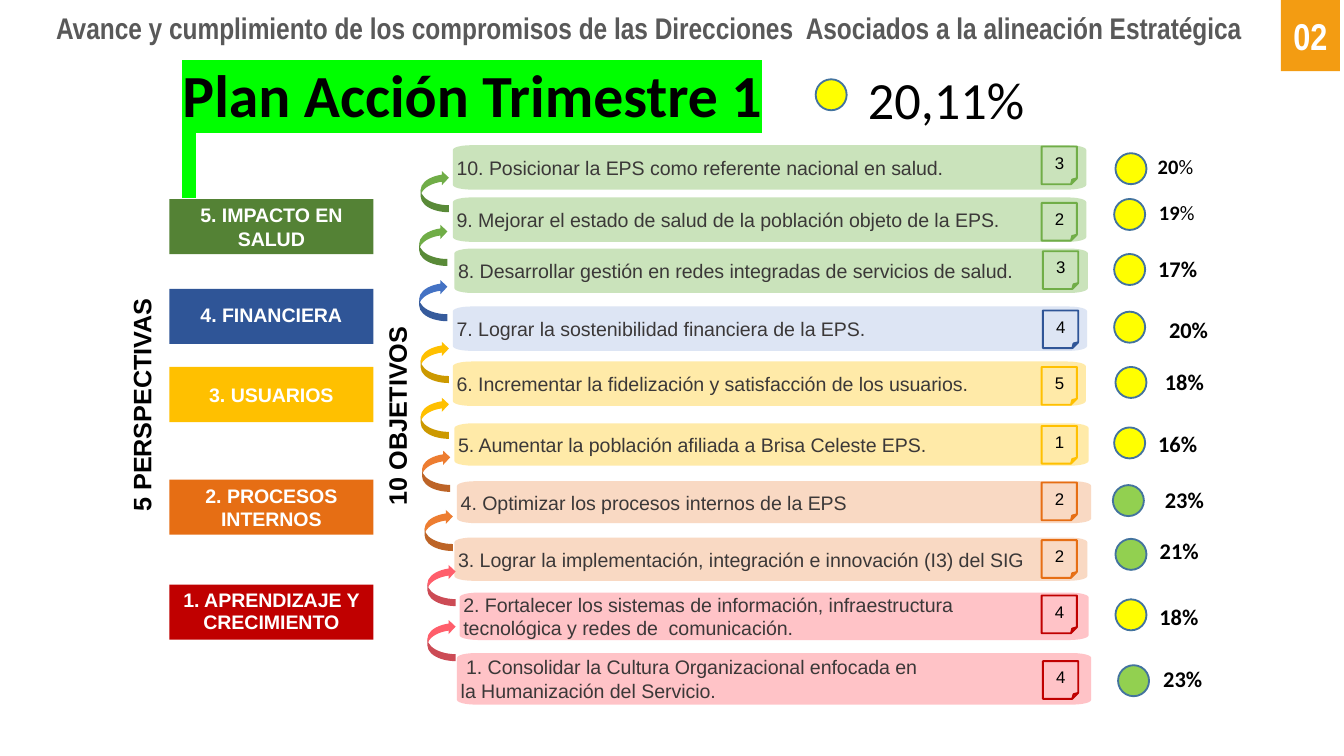
from math import cos, pi, sin

from lxml.etree import SubElement
from pptx import Presentation
from pptx.dml.color import RGBColor
from pptx.enum.shapes import MSO_SHAPE
from pptx.enum.text import MSO_ANCHOR, PP_ALIGN
from pptx.oxml.ns import qn
from pptx.util import Pt

# Colours
BLACK = RGBColor(0, 0, 0)
WHITE = RGBColor(255, 255, 255)
GREY = RGBColor(0x59, 0x59, 0x59)
INK = RGBColor(0x3B, 0x38, 0x38)
AMBER = RGBColor(0xF3, 0x9C, 0x12)
YELLOW = RGBColor(0xFF, 0xFF, 0x00)
LIME = RGBColor(0x92, 0xD0, 0x50)
DOT_EDGE = RGBColor(0x43, 0x73, 0x9E)
DARK_GREEN = RGBColor(0x54, 0x82, 0x35)
GREEN = RGBColor(0x70, 0xAD, 0x47)
PALE_GREEN = RGBColor(0xC5, 0xE0, 0xB4)
NAVY = RGBColor(0x2F, 0x55, 0x97)
BLUE = RGBColor(0x44, 0x72, 0xC4)
PALE_BLUE = RGBColor(0xDA, 0xE3, 0xF3)
GOLD = RGBColor(0xFF, 0xC0, 0x00)
PALE_GOLD = RGBColor(0xFF, 0xE8, 0x9F)
RUST = RGBColor(0xE6, 0x6E, 0x14)
ORANGE = RGBColor(0xED, 0x7D, 0x31)
PALE_ORANGE = RGBColor(0xF9, 0xD5, 0xBD)
RED = RGBColor(0xC0, 0x00, 0x00)
PINK = RGBColor(0xFF, 0x5E, 0x6B)
PALE_PINK = RGBColor(0xFF, 0xBD, 0xC2)

# Content
HEADING = "Avance y cumplimiento de los compromisos de las Direcciones  Asociados a la alineación Estratégica"
PAGE = "02"
PLAN = "Plan Acción Trimestre 1"
PLAN_RESULT = "20,11%"

# Perspective: text, top, fill, line spacing
PERSPECTIVES = [
    ("5. IMPACTO EN SALUD", 106.6, DARK_GREEN, 1),
    ("4. FINANCIERA", 154.8, NAVY, 0.9),
    ("3. USUARIOS", 196.6, GOLD, 1),
    ("2. PROCESOS INTERNOS", 257, RUST, 1),
    ("1. APRENDIZAJE Y CRECIMIENTO", 313.2, RED, 0.9),
]

# Side label: text, left, top, width
SIDE_LABELS = [("5 PERSPECTIVAS", 2.9, 206.6, 148.3), ("10 OBJETIVOS", 157.7, 212.4, 112.3)]

# Group: band, note outline, arrow
GROUPS = {
    "impacto": (PALE_GREEN, GREEN, GREEN),
    "financiera": (PALE_BLUE, NAVY, BLUE),
    "usuarios": (PALE_GOLD, GOLD, GOLD),
    "procesos": (PALE_ORANGE, RUST, ORANGE),
    "aprendizaje": (PALE_PINK, RED, PINK),
}

# Objective: lines, group, band box, count, note place, arrow place,
# status, dot place, result, result place
OBJECTIVES = [
    (["10. Posicionar la EPS como referente nacional en salud."], "impacto",
     (242.6, 77.8, 339.4, 23.8), 3, (558, 78.5), None, YELLOW, (597.6, 82.1), 20, (613.1, 79.2)),
    (["9. Mejorar el estado de salud de la población objeto de la EPS."], "impacto",
     (242.6, 105.8, 339.4, 23.8), 2, (558, 108.7), (225.4, 91.4), YELLOW, (596.9, 106.6), 19, (613.8, 103.7)),
    (["8. Desarrollar gestión en redes integradas de servicios de salud."], "impacto",
     (243.4, 133.2, 339.4, 23.8), 3, (558.7, 134.6), (224.6, 120.2), YELLOW, (596.9, 136.1), 17, (613.4, 133.2)),
    (["7. Lograr la sostenibilidad financiera de la EPS."], "financiera",
     (242.6, 164.2, 339.8, 23.8), 4, (558.7, 166.3), (224.6, 149.8), YELLOW, (596.9, 167), 20, (619.2, 165.6)),
    (["6. Incrementar la fidelización y satisfacción de los usuarios."], "usuarios",
     (242.6, 193.7, 339.1, 23.8), 5, (558, 196.6), (225.4, 182.9), YELLOW, (597.6, 196.6), 18, (617, 193.7)),
    (["5. Aumentar la población afiliada a Brisa Celeste EPS."], "usuarios",
     (243.4, 226.8, 339.8, 22.7), 1, (558, 228.2), (225.4, 212.8), YELLOW, (596.9, 229), 16, (613.4, 226.8)),
    (["4. Optimizar los procesos internos de la EPS"], "procesos",
     (244.8, 257.8, 339.8, 22.5), 2, (558, 258.5), (226.1, 241.2), LIME, (596.2, 259.9), 23, (617, 257)),
    (["3. Lograr la implementación, integración e innovación (I3) del SIG"], "procesos",
     (243.4, 288, 339.1, 23.2), 2, (558, 289.4), (227.5, 272.9), LIME, (597.6, 288.7), 21, (614.2, 284.4)),
    (["2. Fortalecer los sistemas de información, infraestructura",
      "tecnológica y redes de  comunicación."], "aprendizaje",
     (246.2, 317.5, 337, 25.4), 4, (558, 319), (229, 302.4), YELLOW, (597.6, 321.1), 18, (614, 319.7)),
    ([" 1. Consolidar la Cultura Organizacional enfocada en",
      "la Humanización del Servicio."], "aprendizaje",
     (244.8, 349.9, 339.8, 27.6), 4, (558.7, 354.2), (229, 331.9), LIME, (599, 356.4), 23, (616.1, 352.8)),
]
REGULAR_SIGN = (20, 19)  # first two results carry a lighter, smaller percent sign

# Text formats
HEADING_FONT = dict(name="Arial Narrow", size=Pt(16), bold=True)
PAGE_FONT = dict(name="Arial Narrow", size=Pt(20), bold=True)
LABEL_FONT = dict(name="Arial", size=Pt(10.5), bold=True)
SIDE_FONT = dict(name="Arial", size=Pt(13.5), bold=True)
BAND_FONT = dict(name="Arial", size=Pt(10.5), bold=False)
NOTE_FONT = dict(name="Arial", size=Pt(9), bold=False)
PLAN_FONT = dict(name="Calibri", size=Pt(32), bold=True)
PLAN_RESULT_FONT = dict(name="Calibri", size=Pt(28), bold=False)
RESULT_FONT = dict(name="Calibri", size=Pt(12), bold=True)
SMALL_RESULT_FONT = dict(name="Calibri", size=Pt(11), bold=True)


def add_run(paragraph, text, font, color):
    run = paragraph.add_run()
    run.text = text
    for key, value in font.items():
        setattr(run.font, key, value)
    run.font.color.rgb = color
    return run


def write(shape, lines, font, color, align=PP_ALIGN.CENTER, anchor=MSO_ANCHOR.MIDDLE,
          inset=(7.2, 3.6), spacing=1):
    frame = shape.text_frame
    frame.word_wrap = True
    frame.vertical_anchor = anchor
    frame.margin_left = frame.margin_right = Pt(inset[0])
    frame.margin_top = frame.margin_bottom = Pt(inset[1])
    for index, line in enumerate(lines):
        paragraph = frame.add_paragraph() if index else frame.paragraphs[0]
        paragraph.alignment = align
        paragraph.line_spacing = spacing
        if line:
            add_run(paragraph, line, font, color)
    return frame.paragraphs[0]


def paint(shape, fill=None, line=None):
    shape.shadow.inherit = False
    if fill is None:
        shape.fill.background()
    else:
        shape.fill.solid()
        shape.fill.fore_color.rgb = fill
    if line is None:
        shape.line.fill.background()
    else:
        shape.line.color.rgb = line
        shape.line.width = Pt(1)
    return shape


def add_preset(preset, box, fill=None, line=None):
    return paint(slide.shapes.add_shape(preset, *map(Pt, box)), fill, line)


def add_text(box, text, font, **options):
    label = slide.shapes.add_textbox(*map(Pt, box))
    return label, write(label, [text], font, BLACK, **options)


def add_band(left, top, width, height, fill):
    """Band with flat elliptical corners, slightly see-through."""
    rx, ry, steps = 9.9, 2.6, 6
    centres = [(left + width - rx, top + height - ry), (left + rx, top + height - ry),
               (left + rx, top + ry), (left + width - rx, top + ry)]
    points = []
    for quarter, (cx, cy) in enumerate(centres):
        for step in range(steps + 1):
            angle = (quarter + step / steps) * pi / 2
            points.append((Pt(cx + rx * cos(angle)), Pt(cy + ry * sin(angle))))
    builder = slide.shapes.build_freeform(*points[0])
    builder.add_line_segments(points[1:], close=True)
    band = paint(builder.convert_to_shape(), fill)
    color = band.fill._xPr.find(qn("a:solidFill"))[0]
    SubElement(color, qn("a:alpha")).set("val", "90000")
    return band


def highlight(run):
    mark = run.font._element.makeelement(qn("a:highlight"), {})
    SubElement(mark, qn("a:srgbClr")).set("val", "00FF00")
    run.font._element.find(qn("a:solidFill")).addnext(mark)


prs = Presentation()
prs.slide_width, prs.slide_height = Pt(720), Pt(405)
slide = prs.slides.add_slide(prs.slide_layouts[5])

# Heading and page number
heading = slide.shapes.title
heading.left, heading.top, heading.width, heading.height = map(Pt, (13.7, 2.2, 668.2, 25.2))
write(heading, [HEADING], HEADING_FONT, GREY, anchor=MSO_ANCHOR.BOTTOM, inset=(2.9, 2.9))
page = add_preset(MSO_SHAPE.RECTANGLE, (686.2, 0, 31.7, 38.2), AMBER)
write(page, [PAGE], PAGE_FONT, WHITE, inset=(2.9, 2.9))

# Highlighted plan title: the marking runs to the right edge and into a second line
plan, plan_line = add_text((90.7, 31.7, 362.2, 38.2), "", PLAN_FONT, align=PP_ALIGN.LEFT,
                           anchor=MSO_ANCHOR.TOP, spacing=0.9)
tabs = SubElement(plan_line._p.get_or_add_pPr(), qn("a:tabLst"))
SubElement(tabs, qn("a:tab"), pos=str(Pt(347)), algn="l")
highlight(add_run(plan_line, PLAN + "\t", PLAN_FONT, BLACK))
plan_line.add_line_break()
highlight(add_run(plan_line, " ", PLAN_FONT, BLACK))
add_text((457.9, 32.4, 108.7, 41), PLAN_RESULT, PLAN_RESULT_FONT,
         align=PP_ALIGN.LEFT, anchor=MSO_ANCHOR.TOP)
add_preset(MSO_SHAPE.OVAL, (437, 42.5, 16.6, 16.6), YELLOW, DOT_EDGE)

# Perspectives and side labels
for text, top, fill, spacing in PERSPECTIVES:
    box = add_preset(MSO_SHAPE.RECTANGLE, (90.7, top, 109.4, 29.5), fill)
    write(box, [text], LABEL_FONT, WHITE, spacing=spacing)
for text, left, top, width in SIDE_LABELS:
    side, _ = add_text((left, top, width, 20.9), text, SIDE_FONT,
                       anchor=MSO_ANCHOR.TOP, spacing=0.9, inset=(5, 2.9))
    side.rotation = 270

# Objectives
for (lines, group, band_box, count, note_at, arrow_at,
     status, dot_at, result, result_at) in OBJECTIVES:
    band_fill, note_line, arrow_fill = GROUPS[group]
    band = add_band(*band_box, band_fill)
    write(band, lines, BAND_FONT, INK, align=PP_ALIGN.LEFT, inset=(2, 1.5))
    note = add_preset(MSO_SHAPE.FOLDED_CORNER, (*note_at, 18.9, 20.2), line=note_line)
    write(note, [str(count)], NOTE_FONT, BLACK)
    if arrow_at:
        arrow = add_preset(MSO_SHAPE.CURVED_LEFT_ARROW, (*arrow_at, 15.1, 22.3), arrow_fill)
        arrow.rotation = 180
    add_preset(MSO_SHAPE.OVAL, (*dot_at, 16.6, 16.6), status, DOT_EDGE)
    light = group == "impacto" and result in REGULAR_SIGN
    font = SMALL_RESULT_FONT if light else RESULT_FONT
    _, result_line = add_text((*result_at, 54.7, 21.6), str(result), font,
                              align=PP_ALIGN.LEFT, anchor=MSO_ANCHOR.TOP)
    add_run(result_line, "%", {**font, "bold": not light}, BLACK)

prs.save("out.pptx")
